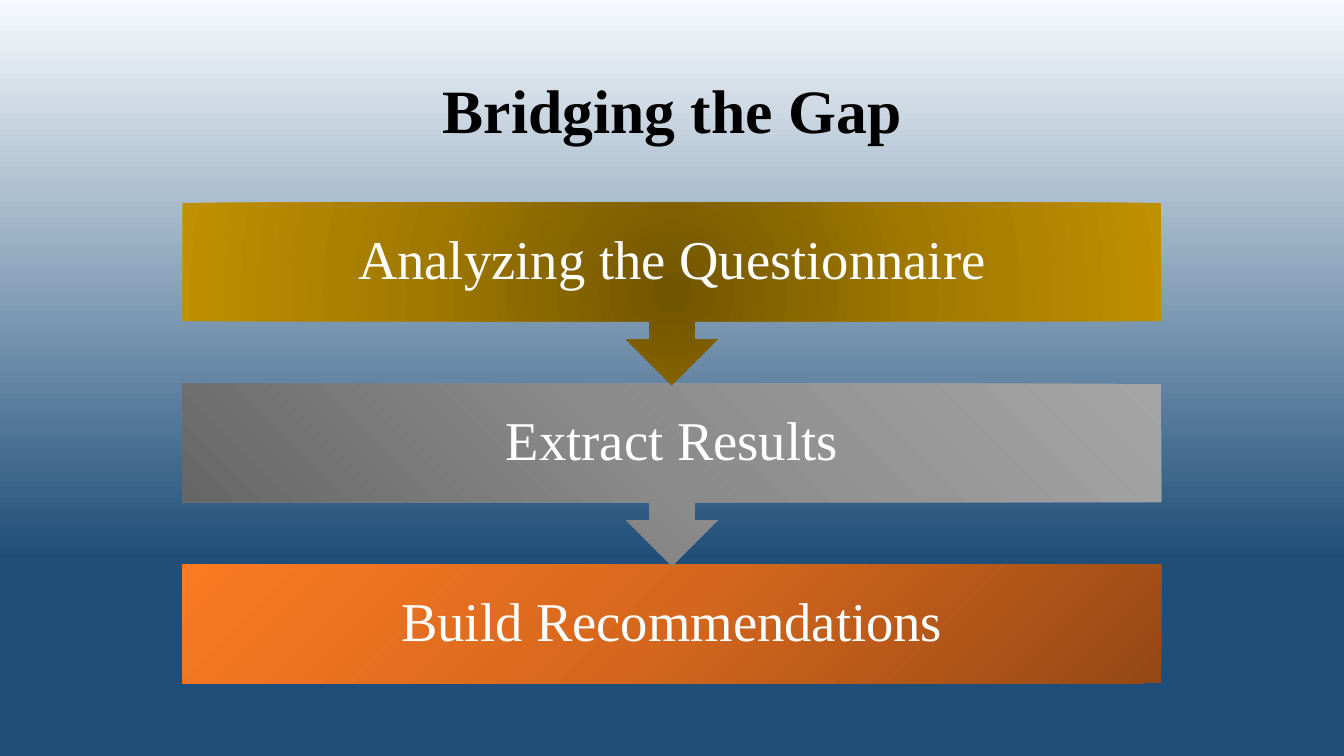
from lxml.etree import SubElement
from pptx import Presentation
from pptx.dml.color import RGBColor
from pptx.enum.shapes import MSO_SHAPE as Kind
from pptx.enum.text import MSO_ANCHOR as Anchor, PP_ALIGN as Align
from pptx.oxml.ns import qn
from pptx.util import Inches, Pt

FONT = "Times New Roman"
TITLE = "Bridging the Gap"
SKY = [(0, "F7FAFD"), (74, "1F4E79"), (100, "1F4E79")]
CENTER = dict(l=50, t=50, r=50, b=50)
CORNER = dict(t=100, r=100)
STEPS = [
    ("Analyzing the Questionnaire", Kind.DOWN_ARROW_CALLOUT, 1.81,
     [(0, "715500"), (50, "A17900"), (100, "BF9000")], CENTER),
    ("Extract Results", Kind.DOWN_ARROW_CALLOUT, 1.81,
     [(0, "626262"), (50, "8B8B8B"), (100, "A5A5A5")], CORNER),
    ("Build Recommendations", Kind.RECTANGLE, 1.18,
     [(0, "954815"), (50, "D4671D"), (100, "FB7A23")], 225),
]
LEFT, TOP, WIDTH, PITCH = 1.81, 2.01, 9.71, 1.795


def color(code):
    return RGBColor.from_string(code)


def shade(fill, root, stops, aim):
    fill.gradient()
    grad = root.find(".//" + qn("a:gradFill"))
    for child in list(grad):
        grad.remove(child)
    items = SubElement(grad, qn("a:gsLst"))
    for pos, code in stops:
        stop = SubElement(items, qn("a:gs"), pos=str(pos * 1000))
        SubElement(stop, qn("a:srgbClr"), val=code)
    if isinstance(aim, dict):
        way = SubElement(grad, qn("a:path"), path="circle")
        rect = {side: str(part * 1000) for side, part in aim.items()}
        SubElement(way, qn("a:fillToRect"), **rect)
    else:
        SubElement(grad, qn("a:lin"), ang=str(aim * 60000), scaled="0")


def write(shape, text, size, code, inset, bold=False):
    frame = shape.text_frame
    frame.word_wrap = True
    frame.vertical_anchor = Anchor.MIDDLE
    frame.margin_left = frame.margin_right = Inches(inset)
    frame.margin_top = frame.margin_bottom = Inches(inset)
    para = frame.paragraphs[0]
    para.text = text
    para.alignment = Align.CENTER
    para.line_spacing = 0.9
    para.font.name = FONT
    para.font.size = Pt(size)
    para.font.bold = bold
    para.font.color.rgb = color(code)


def main():
    deck = Presentation()
    deck.slide_width, deck.slide_height = Inches(13.33), Inches(7.5)
    slide = deck.slides.add_slide(deck.slide_layouts[6])
    shade(slide.background.fill, slide.element, SKY, 90)

    title = slide.shapes.add_textbox(
        Inches(0.92), Inches(0.4), Inches(11.5), Inches(1.45))
    write(title, TITLE, 44, "000000", 0.1, True)

    for row, (text, kind, height, stops, aim) in reversed(list(enumerate(STEPS))):
        step = slide.shapes.add_shape(
            kind, Inches(LEFT), Inches(TOP + row * PITCH),
            Inches(WIDTH), Inches(height))
        step.shadow.inherit = False
        step.line.fill.background()
        shade(step.fill, step.element, stops, aim)
        write(step, text, 39, "FFFFFF", 0.3)

    deck.save("out.pptx")


if __name__ == "__main__":
    main()
